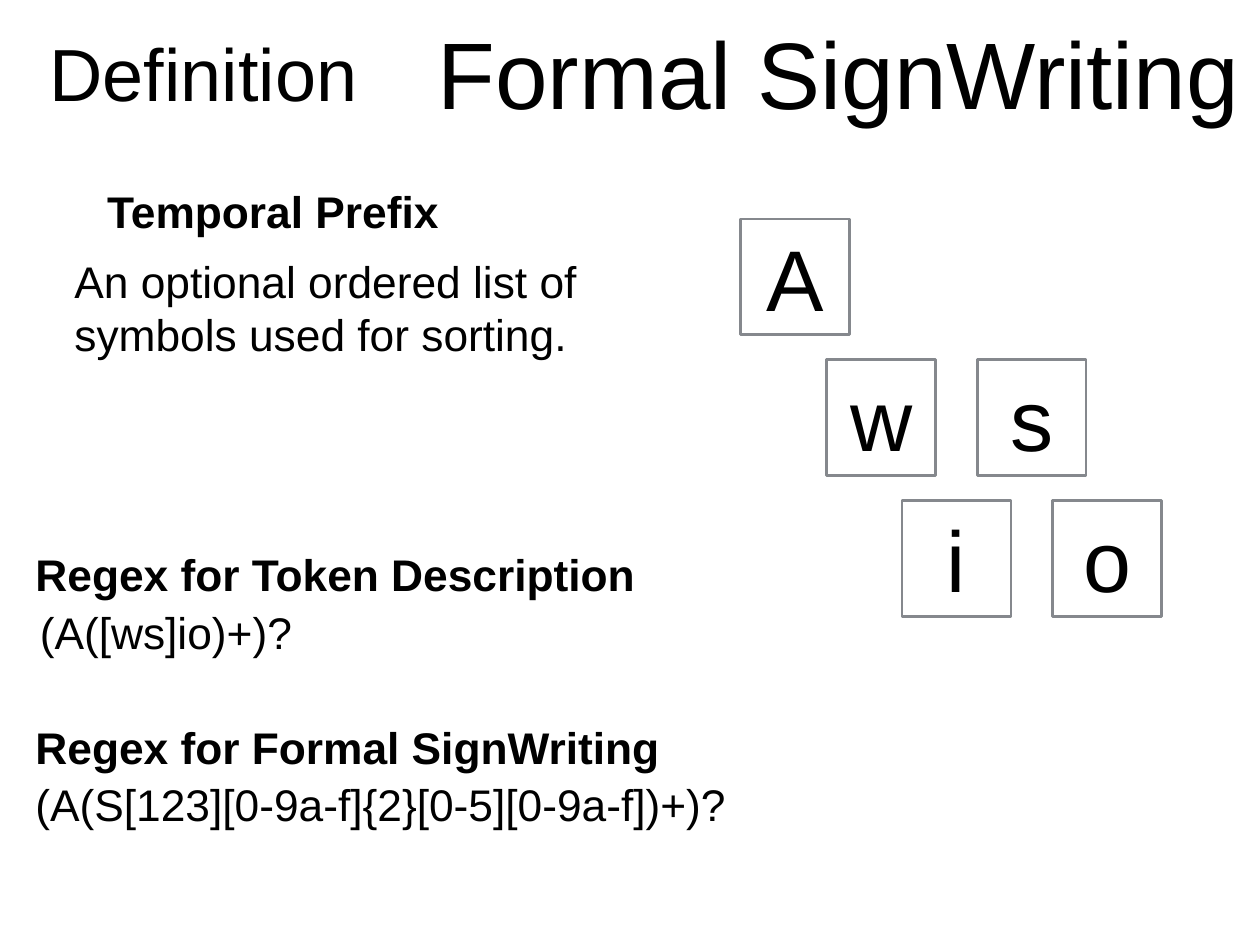
"""Build the slide defining the temporal prefix of Formal SignWriting."""
from pptx import Presentation
from pptx.dml.color import RGBColor
from pptx.enum.shapes import MSO_SHAPE as Shape
from pptx.enum.text import MSO_ANCHOR as Anchor, PP_ALIGN as Align
from pptx.util import Inches, Pt

INK, BORDER = "000000", "85888D"
LEFT, CENTER, TOP, MIDDLE = Align.LEFT, Align.CENTER, Anchor.TOP, Anchor.MIDDLE


def color(hex_code):
    return RGBColor.from_string(hex_code)


def write(shape, wording, size, bold=False, align=LEFT, anchor=MIDDLE, inset=0, wrap=True):
    frame = shape.text_frame
    frame.word_wrap = wrap
    frame.vertical_anchor = anchor
    frame.margin_left = frame.margin_right = Inches(inset)
    frame.margin_top = frame.margin_bottom = Inches(inset)
    paragraph = frame.paragraphs[0]
    paragraph.alignment = align
    run = paragraph.add_run()
    run.text = wording
    run.font.name = "Arial"
    run.font.size = Pt(size)
    run.font.bold = bold
    run.font.color.rgb = color(INK)


deck = Presentation()
deck.slide_width, deck.slide_height = Inches(14.22), Inches(10.67)
slide = deck.slides.add_slide(deck.slide_layouts[6])

titles = [
    ("Definition", 0.56, 5.75, 60, LEFT),
    ("Formal SignWriting", 4.84, 9.25, 76.8, CENTER),
]
for wording, left, width, size, align in titles:
    title = slide.shapes.add_textbox(Inches(left), Inches(0.11), Inches(width), Inches(1.4))
    write(title, wording, size, align=align)

headings = [
    ("Temporal Prefix", 1.15, 2.02, 4.57, True),
    ("Regex for Token Description", 0.34, 6.12, 6.9, False),
    ("Regex for Formal SignWriting", 0.34, 8.08, 7.17, False),
]
for wording, left, top, width, wrap in headings:
    heading = slide.shapes.add_textbox(Inches(left), Inches(top), Inches(width), Inches(0.71))
    write(heading, wording, 36, bold=True, inset=0.06, wrap=wrap)

details = [
    ("An optional ordered list of symbols used for sorting.", 0.84, 2.87, 6.16, 1.31, True),
    ("(A([ws]io)+)?", 0.45, 6.83, 3.04, 0.71, False),
    ("(A(S[123][0-9a-f]{2}[0-5][0-9a-f])+)?", 0.4, 8.77, 9.69, 0.71, True),
]
for wording, left, top, width, height, wrap in details:
    detail = slide.shapes.add_textbox(Inches(left), Inches(top), Inches(width), Inches(height))
    write(detail, wording, 36, anchor=TOP, wrap=wrap)

token_rows = [("A", 8.36), ("ws", 9.33), ("io", 10.18)]
first_top, row_pitch, column_pitch = 2.47, 1.59, 1.7
for row, (tokens, row_left) in enumerate(token_rows):
    for column, token in enumerate(tokens):
        tile = slide.shapes.add_shape(
            Shape.RECTANGLE,
            Inches(row_left + column * column_pitch), Inches(first_top + row * row_pitch),
            Inches(1.23), Inches(1.31))
        tile.shadow.inherit = False
        tile.fill.background()
        tile.line.color.rgb = color(BORDER)
        tile.line.width = Pt(2)
        write(tile, token, 70, align=CENTER)

deck.save("out.pptx")
